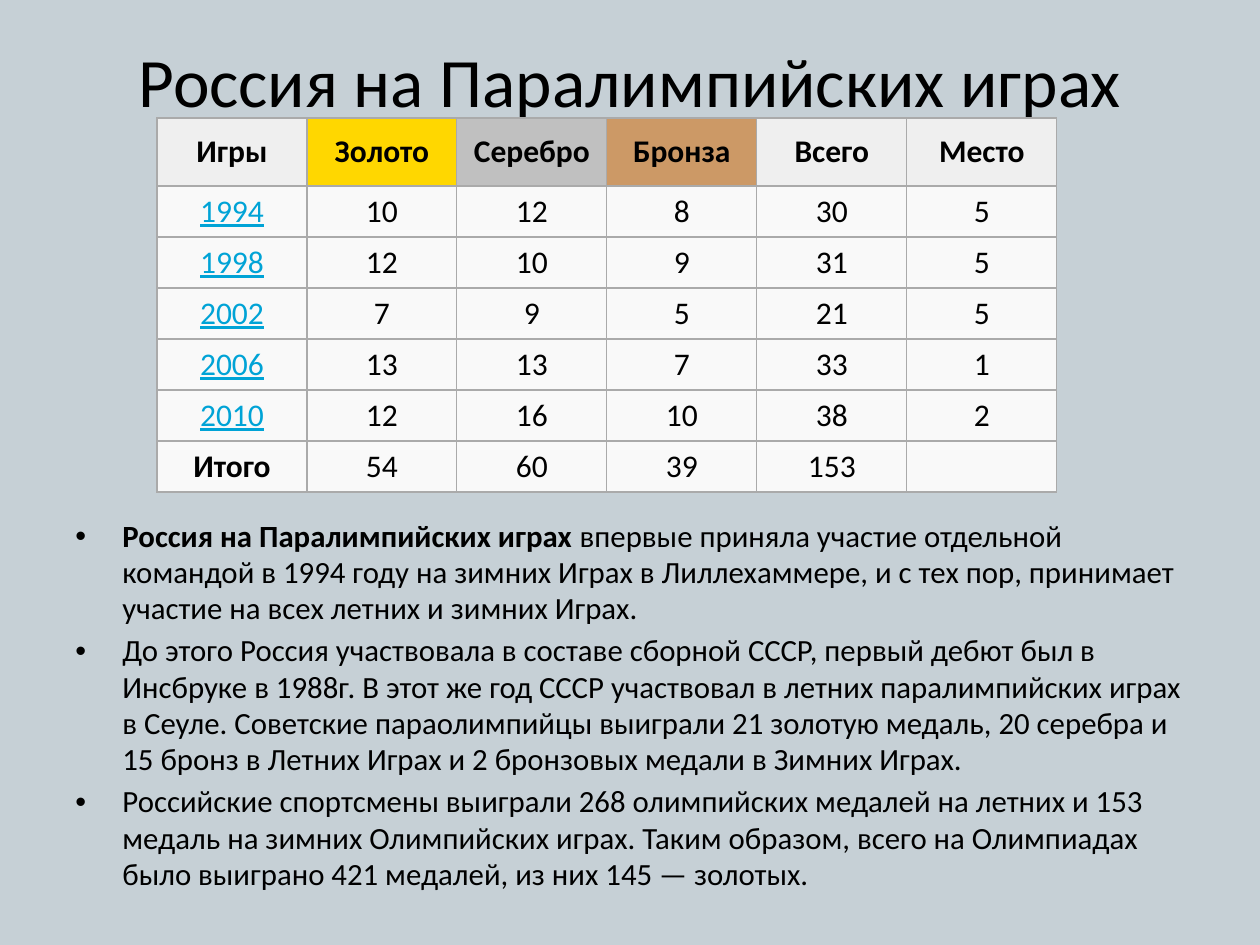
from lxml import etree
from pptx import Presentation
from pptx.dml.color import RGBColor
from pptx.enum.text import MSO_ANCHOR, PP_ALIGN
from pptx.oxml.ns import qn
from pptx.util import Pt

EMU_PER_PX = 914400 / 126
COLORS = {
    "background": "C6D0D6", "text": "000000", "link": "00A3D6", "border": "AAAAAA",
    "header": "EFEFEF", "gold": "FFD700", "silver": "C0C0C0", "bronze": "CC9966",
    "cell": "F9F9F9",
}


def px(value):
    return round(value * EMU_PER_PX)


def rgb(name):
    return RGBColor.from_string(COLORS[name])


class SlideBuilder:
    font = "Calibri"

    def __init__(self, prs):
        self.s = prs.slides.add_slide(prs.slide_layouts[5])
        fill = self.s.background.fill
        fill.solid()
        fill.fore_color.rgb = rgb("background")

    def run(self, p, text, color="text", **formats):
        r = p.add_run()
        r.text = text
        r.font.color.rgb = rgb(color)
        for name, value in {"name": self.font, **formats}.items():
            setattr(r.font, name, value)

    def title(self, text, left, top, width, height, size):
        sp = self.s.shapes.title
        box = {"left": left, "top": top, "width": width, "height": height}
        for name, value in box.items():
            setattr(sp, name, px(value))
        tf = sp.text_frame
        tf.vertical_anchor = MSO_ANCHOR.TOP
        tf.margin_top = 0
        p = tf.paragraphs[0]
        p.alignment = PP_ALIGN.CENTER
        self.run(p, text, size=Pt(size))

    def bullets(self, items, left, top, width, height, size, indent):
        sp = self.s.shapes.add_textbox(px(left), px(top), px(width), px(height))
        tf = sp.text_frame
        tf.word_wrap = True
        for i, runs in enumerate(items):
            p = tf.add_paragraph() if i else tf.paragraphs[0]
            p.space_before = Pt(size * 0.2)
            p.line_spacing = 0.98
            pPr = p._p.get_or_add_pPr()
            pPr.set("marL", str(px(indent)))
            pPr.set("indent", str(-px(indent)))
            etree.SubElement(pPr, qn("a:buFont"), typeface="Arial")
            etree.SubElement(pPr, qn("a:buChar"), char="•")
            for text, bold in runs:
                self.run(p, text, size=Pt(size), bold=bold)

    def cell(self, cell, text, fill, **formats):
        cell.vertical_anchor = MSO_ANCHOR.MIDDLE
        p = cell.text_frame.paragraphs[0]
        p.alignment = PP_ALIGN.CENTER
        if text:
            self.run(p, text, size=Pt(18), **formats)
        # Borders come before the fill in the cell properties
        tcPr = cell._tc.get_or_add_tcPr()
        for side in ("lnL", "lnR", "lnT", "lnB"):
            ln = etree.SubElement(tcPr, qn(f"a:{side}"), w=str(Pt(0.75)))
            solid = etree.SubElement(ln, qn("a:solidFill"))
            etree.SubElement(solid, qn("a:srgbClr"), val=COLORS["border"])
        cell.fill.solid()
        cell.fill.fore_color.rgb = rgb(fill)

    def medal_table(self, header, rows, left, top, col_width, head_height, row_height):
        n_cols, n_rows = len(header), len(rows) + 1
        height = head_height + row_height * len(rows)
        table = self.s.shapes.add_table(n_rows, n_cols, px(left), px(top),
                                        px(col_width * n_cols), px(height)).table
        for col in table.columns:
            col.width = px(col_width)
        for i, row in enumerate(table.rows):
            row.height = px(row_height if i else head_height)
        for j, (text, fill) in enumerate(header):
            self.cell(table.cell(0, j), text, fill, bold=True)
        for i, values in enumerate(rows, start=1):
            for j, value in enumerate(values):
                formats = {"bold": False}
                if j == 0 and value.isdigit():
                    formats.update(color="link", underline=True)
                elif j == 0:
                    formats["bold"] = True
                self.cell(table.cell(i, j), value, "cell", **formats)


HEADER = [("Игры", "header"), ("Золото", "gold"), ("Серебро", "silver"),
          ("Бронза", "bronze"), ("Всего", "header"), ("Место", "header")]
ROWS = [
    ("1994", "10", "12", "8", "30", "5"),
    ("1998", "12", "10", "9", "31", "5"),
    ("2002", "7", "9", "5", "21", "5"),
    ("2006", "13", "13", "7", "33", "1"),
    ("2010", "12", "16", "10", "38", "2"),
    ("Итого", "54", "60", "39", "153", ""),
]
FACTS = [
    [("Россия на Паралимпийских играх", True),
     (" впервые приняла участие отдельной командой в 1994 году на зимних Играх "
      "в Лиллехаммере, и с тех пор, принимает участие на всех летних и зимних Играх.",
      False)],
    [("До этого Россия участвовала в составе сборной СССР, первый дебют был "
      "в Инсбруке в 1988г. В этот же год СССР участвовал в летних паралимпийских "
      "играх в Сеуле. Советские параолимпийцы выиграли 21 золотую медаль, "
      "20 серебра и 15 бронз в Летних Играх и 2 бронзовых медали в Зимних Играх.",
      False)],
    [("Российские спортсмены выиграли 268 олимпийских медалей на летних и 153 "
      "медаль на зимних Олимпийских играх. Таким образом, всего на Олимпиадах "
      "было выиграно 421 медалей, из них 145 — золотых.", False)],
]


def main():
    prs = Presentation()
    prs.slide_width, prs.slide_height = px(1260), px(945)
    slide = SlideBuilder(prs)

    # Title
    slide.title("Россия на Паралимпийских играх", 63, 38, 1134, 158, size=39.6)
    # Facts below the table
    slide.bullets(FACTS, 63, 512, 1138, 333, size=17.6, indent=47)
    # Medals by games
    slide.medal_table(HEADER, ROWS, 157, 118, col_width=150, head_height=68, row_height=51)

    prs.save("out.pptx")


if __name__ == "__main__":
    main()
